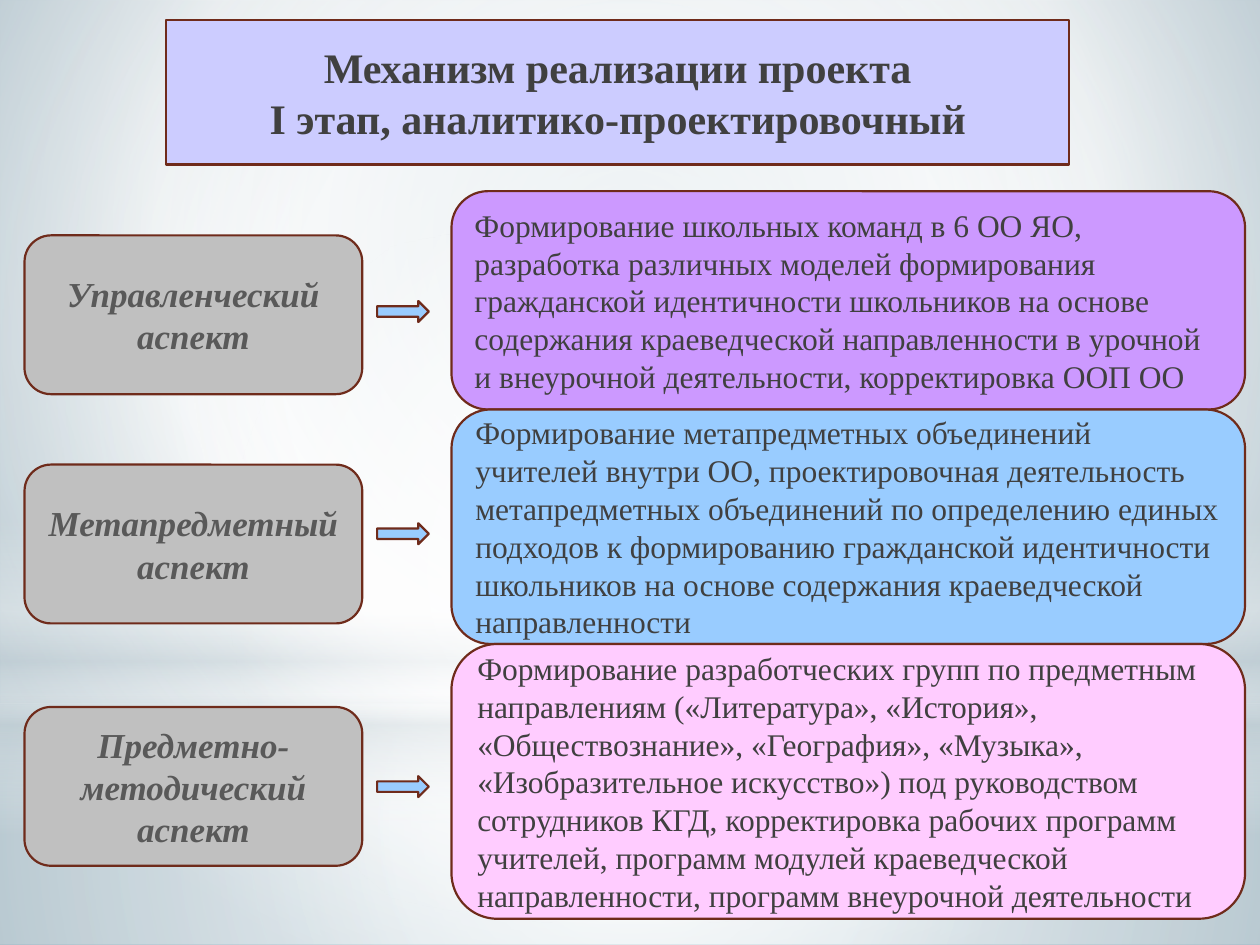
from lxml import etree
from pptx import Presentation
from pptx.dml.color import RGBColor
from pptx.enum.shapes import MSO_SHAPE as Shape
from pptx.enum.text import MSO_ANCHOR as Anchor, PP_ALIGN as Align
from pptx.oxml.ns import qn
from pptx.util import Pt

THEME = {
    "font": "Times New Roman",
    "outline": "6F2B1B", "arrow": "99CCFF", "aspect": "C0C0C0", "title": "CCCCFF",
    "text": "404040", "aspect_text": "595959",
    "title_size": 24, "aspect_size": 20, "outcome_size": 18,
    "white": "FFFFFF", "mist": "C5D1D7", "haze": "B8CAD3", "steel": "8FAEBD",
}
WHITE, MIST = THEME["white"], THEME["mist"]


def set_gradient(properties, stops, center=None):
    """Replace the solid fill by stops of (position %, colour, opacity %).

    The gradient is circular around center (l, t, r, b in %), or vertical without one.
    """
    solid = properties.find(qn("a:solidFill"))
    gradient = etree.Element(qn("a:gradFill"), rotWithShape="1")
    stop_list = etree.SubElement(gradient, qn("a:gsLst"))
    for position, color, opacity in stops:
        stop = etree.SubElement(stop_list, qn("a:gs"), pos=str(position * 1000))
        rgb = etree.SubElement(stop, qn("a:srgbClr"), val=color)
        etree.SubElement(rgb, qn("a:alpha"), val=str(opacity * 1000))
    if center:
        circle = etree.SubElement(gradient, qn("a:path"), path="circle")
        sides = {side: str(value * 1000) for side, value in zip("ltrb", center)}
        etree.SubElement(circle, qn("a:fillToRect"), sides)
    else:
        etree.SubElement(gradient, qn("a:lin"), ang="5400000", scaled="0")
    properties.replace(solid, gradient)


def style_box(box, fill, text="", size=18, color=THEME["text"], align=Align.LEFT,
              bold=False, italic=False):
    box.fill.solid()
    box.fill.fore_color.rgb = RGBColor.from_string(fill)
    box.line.color.rgb = RGBColor.from_string(THEME["outline"])
    box.line.width = Pt(1.25)
    frame = box.text_frame
    frame.text = text
    frame.word_wrap = True
    frame.vertical_anchor = Anchor.MIDDLE
    for paragraph in frame.paragraphs:
        paragraph.alignment = align
        for run in paragraph.runs:
            run.font.name = THEME["font"]
            run.font.size = Pt(size)
            run.font.bold = bold
            run.font.italic = italic
            run.font.color.rgb = RGBColor.from_string(color)


prs = Presentation()
prs.slide_width, prs.slide_height = Pt(720), Pt(540)
slide = prs.slides.add_slide(prs.slide_layouts[5])
shapes = slide.shapes

# Backdrop
slide.background.fill.solid()
set_gradient(slide.background.fill._xPr,
             [(0, THEME["haze"], 100), (60, WHITE, 100), (100, THEME["steel"], 100)],
             (20, 10, 20, 60))
middle = (50, 50, 50, 50)
backdrop = [
    (Shape.RECTANGLE, 402, 138, [(0, WHITE, 91), (37, WHITE, 76), (100, MIST, 79)], middle),
    (Shape.RECTANGLE, 0, 402, [(0, WHITE, 89), (48, WHITE, 62), (100, MIST, 79)], middle),
    (Shape.RECTANGLE, 297, 180,
     [(0, WHITE, 0), (29, WHITE, 30), (45, MIST, 40), (55, WHITE, 26), (65, MIST, 60),
      (100, WHITE, 0)], None),
    (Shape.OVAL, 126, 402, [(0, WHITE, 100), (56, WHITE, 0)], middle),
]
for kind, top, height, stops, center in backdrop:
    layer = shapes.add_shape(kind, 0, Pt(top), prs.slide_width, Pt(height))
    layer.shadow.inherit = False
    layer.line.fill.background()
    layer.fill.solid()
    set_gradient(layer.element.spPr, stops, center)

# Title, in front of the backdrop
title = shapes.title
title.element.getparent().append(title.element)
title.left, title.top, title.width, title.height = Pt(95), Pt(11.5), Pt(516), Pt(82.5)
outline = etree.SubElement(title.element.spPr, qn("a:prstGeom"), prst="roundRect")
etree.SubElement(outline, qn("a:avLst"))
style_box(title, THEME["title"],
          "Механизм реализации проекта\nI этап, аналитико-проектировочный",
          THEME["title_size"], align=Align.CENTER, bold=True)

# Aspect -> outcome rows: aspect top, arrow top, outcome top and height
rows = [
    ("Управленческий аспект", 134.5, 172, 109.25, 124.75, "CC99FF",
     "Формирование школьных команд в 6 ОО ЯО, разработка различных моделей "
     "формирования гражданской идентичности школьников на основе содержания "
     "краеведческой направленности в урочной и внеурочной деятельности, "
     "корректировка ООП ОО"),
    ("Метапредметный аспект", 265.5, 299, 234, 134, "99CCFF",
     "Формирование метапредметных объединений учителей внутри ОО, проектировочная "
     "деятельность метапредметных объединений по определению единых подходов к "
     "формированию гражданской идентичности школьников на основе содержания "
     "краеведческой направленности"),
    ("Предметно-методический аспект", 404, 443.5, 368, 157, "FFCCFF",
     "Формирование разработческих групп по предметным направлениям («Литература», "
     "«История», «Обществознание», «География», «Музыка», «Изобразительное "
     "искусство») под руководством сотрудников КГД, корректировка рабочих программ "
     "учителей, программ модулей краеведческой направленности, программ внеурочной "
     "деятельности"),
]
for aspect, aspect_top, arrow_top, outcome_top, outcome_height, fill, outcome in rows:
    aspect_box = shapes.add_shape(Shape.ROUNDED_RECTANGLE, Pt(14), Pt(aspect_top),
                                  Pt(193), Pt(90.75))
    style_box(aspect_box, THEME["aspect"], aspect, THEME["aspect_size"],
              THEME["aspect_text"], Align.CENTER, bold=True, italic=True)
    arrow = shapes.add_shape(Shape.RIGHT_ARROW, Pt(215.5), Pt(arrow_top), Pt(29.5), Pt(12))
    style_box(arrow, THEME["arrow"])
    outcome_box = shapes.add_shape(Shape.ROUNDED_RECTANGLE, Pt(258), Pt(outcome_top),
                                   Pt(453.5), Pt(outcome_height))
    style_box(outcome_box, fill, outcome, THEME["outcome_size"])
    for part in (aspect_box, arrow, outcome_box):
        part.shadow.inherit = False

prs.save("out.pptx")
